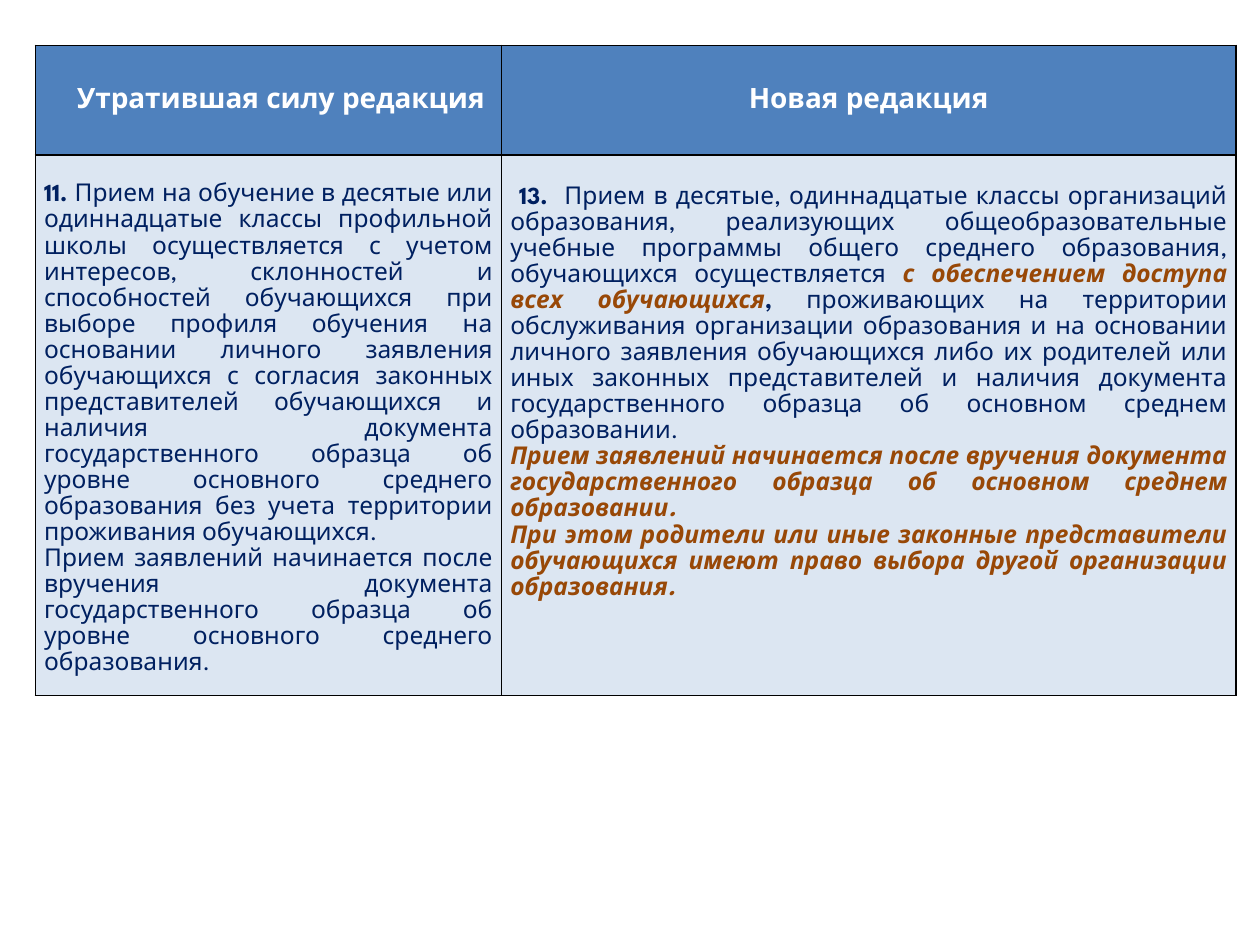
from lxml import etree
from pptx import Presentation
from pptx.dml.color import RGBColor
from pptx.enum import text
from pptx.oxml import ns
from pptx.util import Inches, Pt

WHITE = RGBColor(0xFF, 0xFF, 0xFF)
HEADER_BLUE = RGBColor(0x4F, 0x81, 0xBD)
BODY_BLUE = RGBColor(0xDC, 0xE6, 0xF2)
NAVY = RGBColor(0x00, 0x20, 0x60)
BROWN = RGBColor(0x98, 0x48, 0x07)

HEADING = {"size": Pt(16), "bold": True, "color": WHITE}
PLAIN = {"size": Pt(14), "bold": False, "color": NAVY}
NUMBER = {**PLAIN, "bold": True}
CHANGED = {**PLAIN, "bold": True, "italic": True, "color": BROWN}

# Wording: each cell holds paragraphs, each paragraph holds (text, format) runs
old_rule = [
    [("11. ", NUMBER),
     ("Прием на обучение в десятые или одиннадцатые классы профильной школы "
      "осуществляется с учетом интересов, склонностей и способностей обучающихся "
      "при выборе профиля обучения на основании личного заявления обучающихся "
      "с согласия законных представителей обучающихся и наличия документа "
      "государственного образца об уровне основного среднего образования без учета "
      "территории проживания обучающихся.", PLAIN)],
    [("Прием заявлений начинается после вручения документа государственного образца "
      "об уровне основного среднего образования.", PLAIN)],
]
new_rule = [
    [("13.", NUMBER),
     ("  Прием в десятые, одиннадцатые классы организаций образования, реализующих "
      "общеобразовательные учебные программы общего среднего образования, "
      "обучающихся осуществляется ", PLAIN),
     ("с обеспечением доступа всех обучающихся", CHANGED),
     (",", NUMBER),
     (" проживающих на территории обслуживания организации образования и на основании "
      "личного заявления обучающихся либо их родителей или иных законных "
      "представителей и наличия документа государственного образца об основном "
      "среднем образовании.", PLAIN)],
    [("Прием заявлений начинается после вручения документа государственного образца "
      "об основном среднем образовании.", CHANGED)],
    [("При этом родители или иные законные представители обучающихся имеют право "
      "выбора другой организации образования.", CHANGED)],
]
rows = [
    [[[("Утратившая силу редакция", HEADING)]], [[("Новая редакция", HEADING)]]],
    [old_rule, new_rule],
]
fills = [HEADER_BLUE, BODY_BLUE]
anchors = [text.MSO_ANCHOR.MIDDLE, text.MSO_ANCHOR.TOP]
aligns = [text.PP_ALIGN.CENTER, text.PP_ALIGN.JUSTIFY]
top_margins = [[0, 0], [0.21, 0.23]]
first_indents = [[0.2, 0], [0, 0.07]]
column_widths = [3.7, 5.83]
row_heights = [0.87, 4.29]


def add_borders(cell):
    properties = cell._tc.get_or_add_tcPr()
    for position, side in enumerate(("a:lnL", "a:lnR", "a:lnT", "a:lnB")):
        line = etree.Element(ns.qn(side), w=str(Pt(1)))
        fill = etree.SubElement(line, ns.qn("a:solidFill"))
        etree.SubElement(fill, ns.qn("a:srgbClr"), val="000000")
        properties.insert(position, line)


def add_run(paragraph, wording, look):
    run = paragraph.add_run()
    run.text = wording
    run.font.name = "League Spartan"
    for name, value in look.items():
        if name == "color":
            run.font.color.rgb = value
        else:
            setattr(run.font, name, value)


prs = Presentation()
prs.slide_width, prs.slide_height = Inches(10), Inches(7.5)
slide = prs.slides.add_slide(prs.slide_layouts[6])

# Comparison table
comparison = slide.shapes.add_table(
    2, 2, Inches(0.28), Inches(0.36),
    Inches(sum(column_widths)), Inches(sum(row_heights))).table
for column, width in zip(comparison.columns, column_widths):
    column.width = Inches(width)
for row, height in zip(comparison.rows, row_heights):
    row.height = Inches(height)

for r, row_cells in enumerate(rows):
    for c, paragraphs in enumerate(row_cells):
        cell = comparison.cell(r, c)
        cell.fill.solid()
        cell.fill.fore_color.rgb = fills[r]
        cell_format = {
            "vertical_anchor": anchors[r],
            "margin_left": Inches(0.07), "margin_right": Inches(0.07),
            "margin_top": Inches(top_margins[r][c]), "margin_bottom": 0,
        }
        for name, value in cell_format.items():
            setattr(cell, name, value)
        add_borders(cell)

        for p, runs in enumerate(paragraphs):
            frame = cell.text_frame
            paragraph = frame.add_paragraph() if p else frame.paragraphs[0]
            paragraph.alignment = aligns[r]
            paragraph.line_spacing = 1.15
            if p == 0:
                paragraph._p.get_or_add_pPr().set(
                    "indent", str(Inches(first_indents[r][c])))
            for wording, look in runs:
                add_run(paragraph, wording, look)

prs.save("out.pptx")
